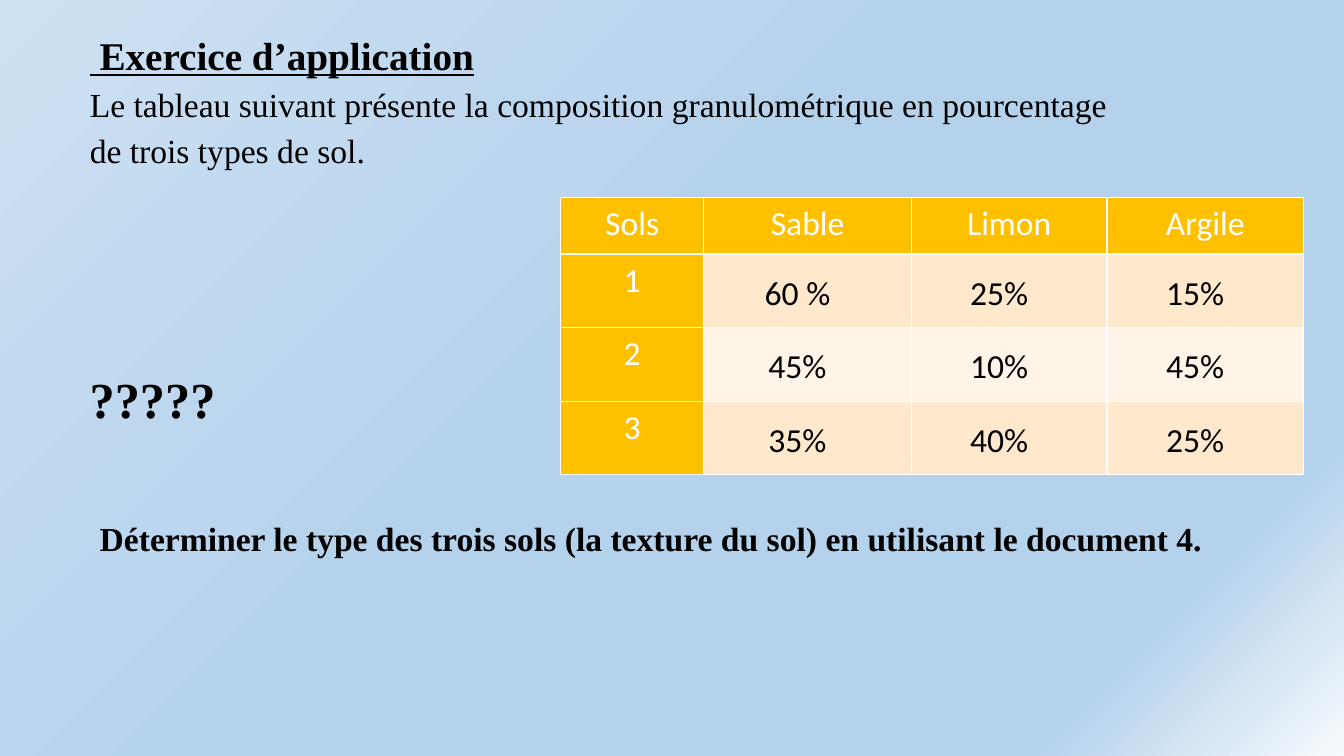
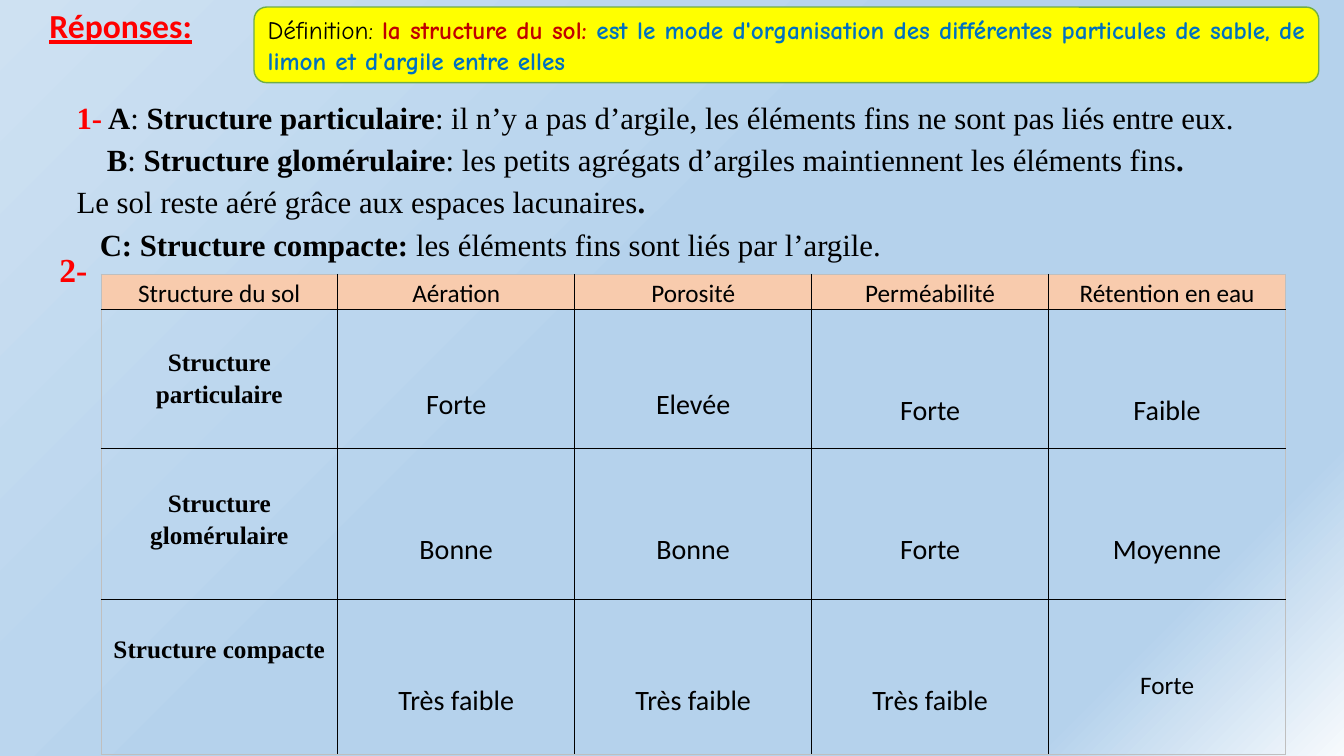
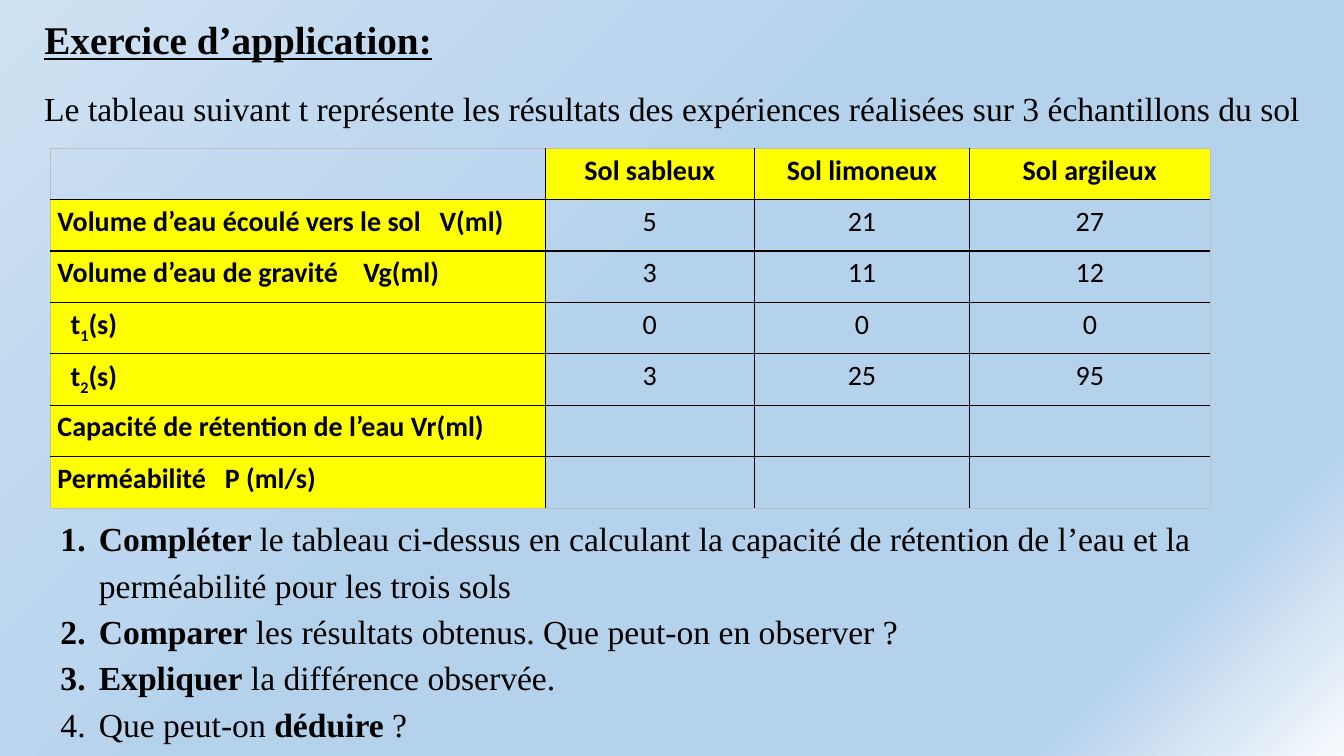
from dataclasses import dataclass

from lxml import etree
from pptx import Presentation
from pptx.dml.color import RGBColor
from pptx.enum.shapes import MSO_SHAPE
from pptx.enum.text import MSO_ANCHOR, MSO_AUTO_SIZE, PP_ALIGN
from pptx.oxml import parse_xml
from pptx.oxml.ns import nsdecls, qn
from pptx.util import Inches, Pt

LEFT, MID, FULL = PP_ALIGN.LEFT, PP_ALIGN.CENTER, PP_ALIGN.JUSTIFY
TOP, CENTER = MSO_ANCHOR.TOP, MSO_ANCHOR.MIDDLE
FIXED = MSO_AUTO_SIZE.NONE
ROUND = MSO_SHAPE.ROUNDED_RECTANGLE


@dataclass(frozen=True)
class Theme:
    serif: str = "Times New Roman"
    sans: str = "Calibri"
    comic: str = "Comic Neue"
    black: str = "000000"
    white: str = "FFFFFF"
    red: str = "FF0000"
    dark: str = "C00000"
    blue: str = "0070C0"
    green: str = "70AD47"
    yellow: str = "FFFF00"
    gold: str = "FFC000"
    peach: str = "F8CBAD"
    grey: str = "BFBFBF"
    bands: tuple = ("FFE8CC", "FFF4E7")
    sky: tuple = ((0, "F7FAFD"), (15, "B5D2EC"), (55, "B5D2EC"),
                  (66, "BBD6EE"), (100, "CEE1F2"))
    head: int = 28
    text: int = 24
    body: int = 22
    cell: int = 20
    small: int = 18
    mark: int = 36
    loose: float = 1.15


T = Theme()


def add_run(par, text, size=T.text, font=T.serif, color=T.black,
            bold=False, under=False, base=0):
    run = par.add_run()
    run.text = text
    face = run.font
    face.size, face.name = Pt(size), font
    face.bold, face.underline = bold, under
    face.color.rgb = RGBColor.from_string(color)
    if base:
        run._r.get_or_add_rPr().set("baseline", str(base * 1000))


def write(frame, paras, align=LEFT, gap=T.loose, dents=(), number=False, **form):
    """Each paragraph is a string or a list of strings and (text, format) pairs."""
    for i, runs in enumerate(paras):
        par = frame.paragraphs[0] if i == 0 else frame.add_paragraph()
        par.alignment, par.line_spacing = align, gap
        par.space_before = par.space_after = Pt(0)
        props = par._p.get_or_add_pPr()
        dent = dents[i] if i < len(dents) else 0
        props.set("marL", str(Inches(0.38 if number else 0)))
        props.set("indent", str(Inches(-0.38 if number else dent)))
        if number:
            etree.SubElement(props, qn("a:buFont"), typeface="+mj-lt")
            etree.SubElement(props, qn("a:buAutoNum"), type="arabicPeriod")
        else:
            etree.SubElement(props, qn("a:buNone"))
        for run in [runs] if isinstance(runs, str) else runs:
            text, own = (run, {}) if isinstance(run, str) else run
            add_run(par, text, **{**form, **own})


def bold(text):
    return text, {"bold": True}


def place(shape, box, paras, anchor=TOP, **form):
    shape.left, shape.top, shape.width, shape.height = map(Inches, box)
    frame = shape.text_frame
    frame.word_wrap, frame.auto_size = True, FIXED
    frame.vertical_anchor = anchor
    write(frame, paras, **form)


def add_text(slide, box, text, **form):
    place(slide.shapes.add_textbox(0, 0, 0, 0), box, [text], **form)


def add_title(slide, box, text, **form):
    look = {"size": T.head, "bold": True, "under": True, **form}
    place(slide.shapes.title, box, [text], **look)


def add_body(slide, box, paras, **form):
    place(slide.placeholders[1], box, paras, **form)


def set_edges(cell, edges):
    """Edges are (colour, points) for left, right, top and bottom."""
    props = cell._tc.get_or_add_tcPr()
    for i, (side, (color, width)) in enumerate(zip("LRTB", edges)):
        props.insert(i, parse_xml(
            f'<a:ln{side} {nsdecls("a")} w="{Pt(width)}"><a:solidFill>'
            f'<a:srgbClr val="{color}"/></a:solidFill></a:ln{side}>'))


def add_grid(slide, at, cols, rows, cells, style, inner, outer):
    """style(row, col) gives the fill, the margins and the text format of a cell."""
    high, wide = len(rows), len(cols)
    box = map(Inches, (*at, sum(cols), sum(rows)))
    table = slide.shapes.add_table(high, wide, *box).table
    table.first_row = table.horz_banding = False
    for col, width in zip(table.columns, cols):
        col.width = Inches(width)
    for row, height in zip(table.rows, rows):
        row.height = Inches(height)
    for r in range(high):
        for c in range(wide):
            cell, look = table.cell(r, c), dict(style(r, c))
            fill = look.pop("fill", None)
            if fill:
                cell.fill.solid()
                cell.fill.fore_color.rgb = RGBColor.from_string(fill)
            else:
                cell.fill.background()
            cell.margin_left = Inches(0.07)
            cell.margin_right = Inches(look.pop("right", 0.07))
            cell.margin_top = Inches(look.pop("top", 0))
            cell.margin_bottom = 0
            cell.vertical_anchor = look.pop("anchor", TOP)
            if cells[r][c]:
                write(cell.text_frame, [cells[r][c]],
                      **{"font": T.sans, "align": MID, **look})
            ends = (c == 0, c == wide - 1, r == 0, r == high - 1)
            set_edges(cell, [outer if end else inner for end in ends])


def paint_sky(master):
    master.background.fill.solid()
    plain = master.element.find(".//" + qn("p:bgPr")).find(qn("a:solidFill"))
    stops = "".join(f'<a:gs pos="{pos * 1000}"><a:srgbClr val="{color}"/></a:gs>'
                    for pos, color in T.sky)
    plain.getparent().replace(plain, parse_xml(
        f'<a:gradFill {nsdecls("a")} rotWithShape="1"><a:gsLst>{stops}</a:gsLst>'
        '<a:path path="circle"><a:fillToRect l="100000" t="100000"/></a:path>'
        '<a:tileRect r="-100000" b="-100000"/></a:gradFill>'))


def soil_mix(slide):
    def style(row, col):
        if row == 0 or col == 0:
            return {"fill": T.gold, "size": T.text, "color": T.white}
        return {"fill": T.bands[(row - 1) % 2], "size": T.text,
                "anchor": CENTER, "right": 0.27}

    add_grid(slide, (5.56, 1.96), (1.42, 2.06, 1.94, 1.95), (0.56, *[0.73] * 3),
             [("Sols", "Sable", "Limon", "Argile"),
              ("1", "60 %", "25%", "15%"),
              ("2", "45%", "10%", "45%"),
              ("3", "35%", "40%", "25%")],
             style, (T.white, 1), (T.white, 1))
    add_title(slide, (0.79, 0.19, 10.54, 0.6), " Exercice d’application")
    add_body(slide, (0.79, 0.72, 10.54, 1.04),
             ["Le tableau suivant présente la composition granulométrique "
              "en pourcentage de trois types de sol."])
    add_text(slide, (0.89, 5.03, 11.3, 0.54),
             "Déterminer le type des trois sols (la texture du sol) "
             "en utilisant le document 4.", bold=True)
    add_text(slide, (0.79, 3.6, 1.6, 1.31), "?????",
             size=T.mark, bold=True, gap=1)


def add_note(slide, box, runs):
    note = slide.shapes.add_shape(ROUND, 0, 0, 0, 0)
    note.shadow.inherit = False
    note.fill.solid()
    note.fill.fore_color.rgb = RGBColor.from_string(T.yellow)
    note.line.color.rgb = RGBColor.from_string(T.green)
    note.line.width = Pt(1)
    place(note, box, [runs], anchor=CENTER, align=FULL, gap=1,
          font=T.comic, size=T.small)


def answers(slide):
    drops = {1: (0.35, 0.73, 0.73, 0.78, 0.78),
             2: (0.37, *[0.78] * 4),
             3: (0.32, *[0.78] * 3, 0.65)}

    def style(row, col):
        if row == 0:
            return {"fill": T.peach, "size": T.small}
        look = {"top": drops[row][col], "size": T.cell}
        if col == 0:
            look.update(font=T.serif, size=T.small, bold=True)
        elif (row, col) == (3, 4):
            look.update(size=T.small)
        return look

    add_grid(slide, (1, 2.72), [2.35] * 5, (0.35, 1.38, 1.5, 1.53),
             [("Structure du sol", "Aération", "Porosité", "Perméabilité",
               "Rétention en eau"),
              ("Structure particulaire", "Forte", "Elevée", "Forte", "Faible"),
              ("Structure glomérulaire", "Bonne", "Bonne", "Forte", "Moyenne"),
              ("Structure compacte", *["Très faible"] * 3, "Forte")],
             style, (T.black, 1), (T.grey, 0.5))
    add_title(slide, (0.39, 0, 1.8, 0.5), "Réponses:",
              size=T.text, font=T.sans, color=T.red, gap=1)
    add_body(slide, (0.66, 0.87, 12.08, 1.8), [
        [("1-", {"color": T.red, "bold": True}), bold(" A"), ": ",
         bold("Structure particulaire"),
         ": il n’y a pas d’argile, les éléments fins ne sont pas liés entre eux."],
        [bold("B"), ": ", bold("Structure glomérulaire"),
         ": les petits agrégats d’argiles maintiennent les éléments fins",
         bold(".")],
        ["Le sol reste aéré grâce aux espaces lacunaires", bold(".")],
        [bold("C: Structure compacte: "),
         "les éléments fins sont liés par l’argile."],
    ], size=T.body, dents=(0, 0.3, 0, 0.23))
    add_text(slide, (0.49, 2.42, 0.7, 0.5), "2-", color=T.red, bold=True, gap=1)
    add_note(slide, (2.52, 0.07, 10.56, 0.75), [
        "Définition: ",
        ("la structure du sol: ", {"color": T.dark, "bold": True}),
        ("est le mode d'organisation des différentes particules de sable, "
         "de limon et d'argile entre elles", {"color": T.blue, "bold": True})])


def water_test(slide):
    def style(row, col):
        look = {"size": T.cell}
        if (row == 0) != (col == 0):
            look.update(fill=T.yellow, bold=True)
        if col == 0:
            look.update(align=LEFT, dents=(0.13 if row in (3, 4) else 0,))
        return look

    def time(digit):
        return ["t", (digit, {"base": -25}), "(s)"]

    add_title(slide, (0.34, 0.1, 4.4, 0.57), "Exercice d’application:", gap=1)
    add_text(slide, (0.34, 0.82, 12.99, 0.5),
             "Le tableau suivant t représente les résultats des expériences "
             "réalisées sur 3 échantillons du sol", gap=1)
    add_grid(slide, (0.5, 1.47), (4.91, 2.07, 2.14, 2.38), [0.51] * 7,
             [("", "Sol sableux", "Sol limoneux", "Sol argileux"),
              ("Volume d’eau écoulé vers le sol   V(ml)", "5", "21", "27"),
              ("Volume d’eau de gravité    Vg(ml)", "3", "11", "12"),
              (time("1"), "0", "0", "0"),
              (time("2"), "3", "25", "95"),
              ("Capacité de rétention de l’eau Vr(ml)", "", "", ""),
              ("Perméabilité   P (ml/s)", "", "", "")],
             style, (T.black, 1), (T.grey, 0.5))
    add_body(slide, (0.5, 5.03, 11.89, 2.42), [
        [bold("Compléter "),
         "le tableau ci-dessus en calculant la capacité de rétention de l’eau "
         "et la perméabilité pour les trois sols"],
        [bold("Comparer"), " les résultats obtenus. Que peut-on en observer ?"],
        [bold("Expliquer"), " la différence observée."],
        ["Que peut-on ", bold("déduire"), " ?"],
    ], number=True)


def main():
    deck = Presentation()
    deck.slide_width, deck.slide_height = Inches(13.33), Inches(7.5)
    paint_sky(deck.slide_master)
    for build in (soil_mix, answers, water_test):
        build(deck.slides.add_slide(deck.slide_layouts[1]))
    deck.save("out.pptx")


if __name__ == "__main__":
    main()
